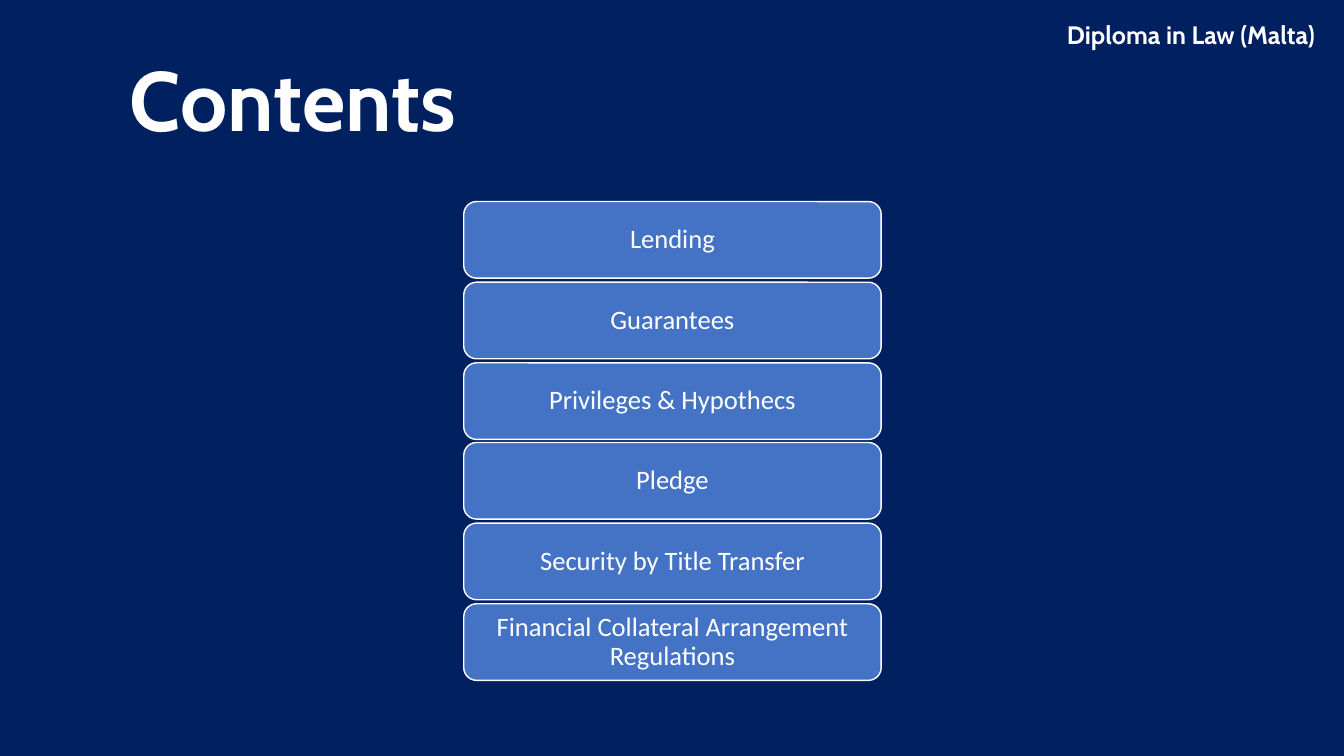
import dataclasses

import pptx
import pptx.dml.color
import pptx.enum.shapes
import pptx.enum.text
import pptx.shapes.autoshape
import pptx.slide
import pptx.util

PX = 9144  # EMU per px, 100 px to the inch

NAVY = pptx.dml.color.RGBColor(0x00, 0x20, 0x60)
BLUE = pptx.dml.color.RGBColor(0x44, 0x72, 0xC4)
WHITE = pptx.dml.color.RGBColor(0xFF, 0xFF, 0xFF)

ALIGN = pptx.enum.text.PP_ALIGN
ANCHOR = pptx.enum.text.MSO_ANCHOR
SHAPE = pptx.enum.shapes.MSO_SHAPE

SLIDE_WIDTH, SLIDE_HEIGHT = 1333, 750
TOPIC_LEFT, TOPIC_WIDTH, TOPIC_HEIGHT = 460, 414, 76
FIRST_TOP, LAST_TOP = 200, 599
TOPICS = (
    "Lending",
    "Guarantees",
    "Privileges & Hypothecs",
    "Pledge",
    "Security by Title Transfer",
    "Financial Collateral Arrangement Regulations",
)


@dataclasses.dataclass(frozen=True)
class Box:
    left: int
    top: int
    width: int
    height: int

    def emu(self) -> tuple[int, int, int, int]:
        return self.left * PX, self.top * PX, self.width * PX, self.height * PX


@dataclasses.dataclass(frozen=True)
class Topic:
    label: str
    box: Box


def write(
    frame: pptx.text.text.TextFrame,
    text: str,
    *,
    size: int,
    font: str,
    bold: bool = False,
    align: ALIGN = ALIGN.LEFT,
    anchor: ANCHOR = ANCHOR.TOP,
    spacing: float = 1.0,
    insets: tuple[int, int] = (10, 5),
) -> None:
    """Fill a frame with one white paragraph; insets are side and top/bottom px."""
    frame.word_wrap = True
    frame.vertical_anchor = anchor
    frame.margin_left = frame.margin_right = insets[0] * PX
    frame.margin_top = frame.margin_bottom = insets[1] * PX
    paragraph = frame.paragraphs[0]
    paragraph.alignment = align
    paragraph.line_spacing = spacing
    run = paragraph.add_run()
    run.text = text
    run.font.name = font
    run.font.size = pptx.util.Pt(size)
    run.font.bold = bold
    run.font.color.rgb = WHITE


def add_panel(
    slide: pptx.slide.Slide,
    kind: SHAPE,
    box: Box,
    fill: pptx.dml.color.RGBColor,
    outline: pptx.dml.color.RGBColor,
) -> pptx.shapes.autoshape.Shape:
    panel = slide.shapes.add_shape(kind, *box.emu())
    panel.shadow.inherit = False
    panel.fill.solid()
    panel.fill.fore_color.rgb = fill
    panel.line.color.rgb = outline
    panel.line.width = pptx.util.Pt(1)
    return panel


def add_topic(slide: pptx.slide.Slide, topic: Topic) -> None:
    panel = add_panel(slide, SHAPE.ROUNDED_RECTANGLE, topic.box, BLUE, WHITE)
    write(panel.text_frame, topic.label, size=19, font="Calibri",
          align=ALIGN.CENTER, anchor=ANCHOR.MIDDLE, spacing=0.9, insets=(8, 4))


def main() -> None:
    deck = pptx.Presentation()
    deck.slide_width = SLIDE_WIDTH * PX
    deck.slide_height = SLIDE_HEIGHT * PX
    slide = deck.slides.add_slide(deck.slide_layouts[6])

    # Backdrop
    add_panel(slide, SHAPE.RECTANGLE, Box(0, 0, SLIDE_WIDTH, SLIDE_HEIGHT), NAVY, NAVY)

    # Course name and heading
    course = slide.shapes.add_textbox(*Box(839, 14, 475, 40).emu())
    write(course.text_frame, "Diploma in Law (Malta)", size=18, font="Cabin",
          bold=True, align=ALIGN.RIGHT)
    heading = slide.shapes.add_textbox(*Box(119, 31, 1150, 145).emu())
    write(heading.text_frame, "Contents", size=60, font="Cabin",
          bold=True, anchor=ANCHOR.MIDDLE, spacing=0.9)

    # Stack of topics, evenly spaced from first to last
    pitch = (LAST_TOP - FIRST_TOP) / (len(TOPICS) - 1)
    for index, label in enumerate(TOPICS):
        top = round(FIRST_TOP + index * pitch)
        add_topic(slide, Topic(label, Box(TOPIC_LEFT, top, TOPIC_WIDTH, TOPIC_HEIGHT)))

    deck.save("out.pptx")


if __name__ == "__main__":
    main()
